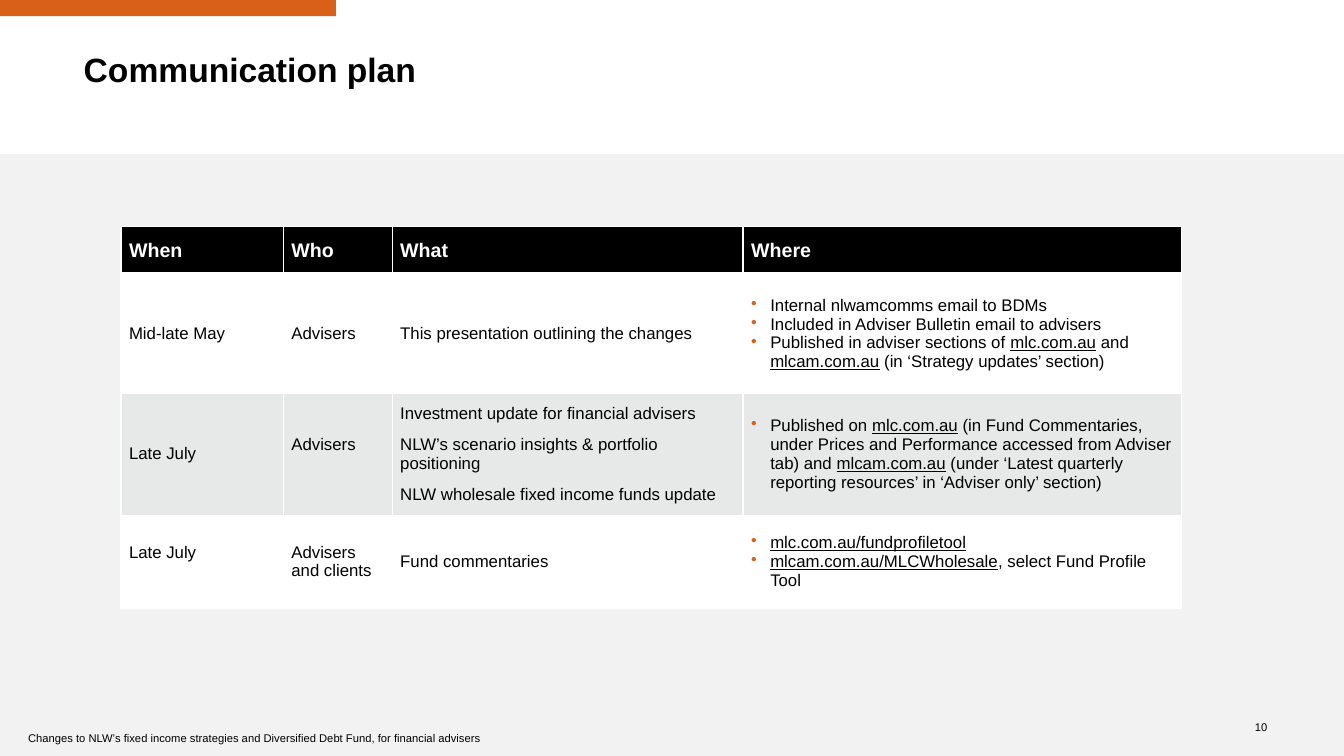
"""Build the communication plan slide."""
from dataclasses import dataclass

from lxml import etree
from pptx import Presentation, util as u
from pptx.dml.color import RGBColor
from pptx.enum import shapes, text
from pptx.oxml.ns import qn


@dataclass(frozen=True)
class Theme:
    """Colours, type sizes and spacing of the slide."""
    font: str = "Arial"
    black: str = "000000"
    white: str = "FFFFFF"
    orange: str = "D86018"
    backdrop: str = "F2F2F2"
    band: str = "E7E9E9"
    title_size: int = 24
    header_size: int = 14
    body_size: int = 12
    small_size: int = 8
    cell_inset: float = 0.08
    raised_inset: float = 0.27
    bullet_indent: float = 0.19


THEME = Theme()
WIDTH, HEIGHT = u.Inches(13.33), u.Inches(7.5)
COLUMN_SHARES = (12.08, 8.1, 26.11, 32.63)
ROW_SHARES = (6.27, 15.73, 15.33, 12.33)
HEADERS = ("When", "Who", "What", "Where")
PLAN = (
    (("Mid-late May",), ("Advisers",), ("This presentation outlining the changes",),
     ("Internal nlwamcomms email to BDMs",
      "Included in Adviser Bulletin email to advisers",
      "Published in adviser sections of _mlc.com.au_ and _mlcam.com.au_ "
      "(in ‘Strategy updates’ section)")),
    (("Late July",), ("Advisers",),
     ("Investment update for financial advisers",
      "NLW’s scenario insights & portfolio positioning",
      "NLW wholesale fixed income funds update"),
     ("Published on _mlc.com.au_ (in Fund Commentaries, under Prices and Performance "
      "accessed from Adviser tab) and _mlcam.com.au_ (under ‘Latest quarterly "
      "reporting resources’ in ‘Adviser only’ section)",)),
    (("Late July",), ("Advisers and clients",), ("Fund commentaries",),
     ("_mlc.com.au/fundprofiletool_",
      "_mlcam.com.au/MLCWholesale_, select Fund Profile Tool")),
)
RAISED_CELLS = {(2, 1), (3, 0)}


def apply(target, values):
    """Set every attribute named in values on target."""
    for name, value in values.items():
        setattr(target, name, value)


def across(share):
    """Turn a percentage of the slide width into a length."""
    return round(WIDTH * share / 100)


def down(share):
    """Turn a percentage of the slide height into a length."""
    return round(HEIGHT * share / 100)


def place(left, top, width, height):
    """Turn four percentages into a position and size."""
    return across(left), down(top), across(width), down(height)


def paint(fill, color):
    """Give a fill one solid colour."""
    fill.solid()
    fill.fore_color.rgb = RGBColor.from_string(color)


def write(paragraph, content, size, color=THEME.black, bold=False):
    """Write content as runs, underlining the parts between underscores."""
    for index, part in enumerate(content.split("_")):
        if part:
            run = paragraph.add_run()
            run.text = part
            apply(run.font, {"name": THEME.font, "size": u.Pt(size), "bold": bold,
                             "underline": index % 2 == 1})
            run.font.color.rgb = RGBColor.from_string(color)


def add_block(slide, box, color):
    """Add a plain filled rectangle."""
    shape = slide.shapes.add_shape(shapes.MSO_SHAPE.RECTANGLE, *place(*box))
    shape.shadow.inherit = False
    paint(shape.fill, color)
    shape.line.fill.background()


def add_label(slide, box, content, size, bold=False, frame=None, layout=None):
    """Add a one-paragraph text box."""
    text_frame = slide.shapes.add_textbox(*place(*box)).text_frame
    apply(text_frame, {"word_wrap": True, **(frame or {})})
    paragraph = text_frame.paragraphs[0]
    apply(paragraph, layout or {})
    write(paragraph, content, size, bold=bold)


def add_bullet(paragraph):
    """Give a paragraph a coloured bullet and a hanging indent."""
    properties = paragraph._p.get_or_add_pPr()
    indent = u.Inches(THEME.bullet_indent)
    properties.set("marL", str(indent))
    properties.set("indent", str(-indent))
    color = etree.SubElement(properties, qn("a:buClr"))
    etree.SubElement(color, qn("a:srgbClr"), val=THEME.orange)
    etree.SubElement(properties, qn("a:buChar"), char="•")


def add_borders(cell, top, bottom):
    """Draw white cell borders with the given top and bottom points."""
    properties = cell._tc.get_or_add_tcPr()
    for side, points in {"L": 1, "R": 1, "T": top, "B": bottom}.items():
        line = etree.SubElement(properties, qn(f"a:ln{side}"), w=str(u.Pt(points)))
        fill = etree.SubElement(line, qn("a:solidFill"))
        etree.SubElement(fill, qn("a:srgbClr"), val=THEME.white)


def style_cell(cell, color, top=1, bottom=1, raised=False):
    """Set the borders, fill, anchor and insets of a cell."""
    add_borders(cell, top, bottom)
    paint(cell.fill, color)
    inset = u.Inches(THEME.cell_inset)
    apply(cell, {"vertical_anchor": text.MSO_ANCHOR.MIDDLE,
                 "margin_left": inset, "margin_right": inset, "margin_top": inset,
                 "margin_bottom": u.Inches(THEME.raised_inset) if raised else inset})


def fill_cell(cell, lines, heading):
    """Write the paragraphs of a body cell in the manner of its column."""
    frame = cell.text_frame
    for index, line in enumerate(lines):
        paragraph = frame.add_paragraph() if index else frame.paragraphs[0]
        if heading == "What":
            apply(paragraph, {"space_before": u.Pt(3 if index else 0),
                              "space_after": u.Pt(6)})
        if heading == "Where":
            add_bullet(paragraph)
        write(paragraph, line, THEME.body_size)


def add_plan_table(slide, left, top):
    """Add the communication plan table."""
    box = place(left, top, sum(COLUMN_SHARES), sum(ROW_SHARES))
    table = slide.shapes.add_table(len(ROW_SHARES), len(COLUMN_SHARES), *box).table
    apply(table, {"first_row": True, "horz_banding": False})
    for column, share in zip(table.columns, COLUMN_SHARES):
        column.width = across(share)
    for row, share in zip(table.rows, ROW_SHARES):
        row.height = down(share)
    for column, heading in enumerate(HEADERS):
        cell = table.cell(0, column)
        style_cell(cell, THEME.black, bottom=3)
        write(cell.text_frame.paragraphs[0], heading, THEME.header_size, THEME.white, True)
        for row, entries in enumerate(PLAN, 1):
            cell = table.cell(row, column)
            style_cell(cell, THEME.white if row % 2 else THEME.band,
                       top=3 if row == 1 else 1, raised=(row, column) in RAISED_CELLS)
            fill_cell(cell, entries[column], heading)


def main():
    """Build and save the presentation."""
    presentation = Presentation()
    apply(presentation, {"slide_width": WIDTH, "slide_height": HEIGHT})
    slide = presentation.slides.add_slide(presentation.slide_layouts[6])
    flush = {f"margin_{side}": 0 for side in ("left", "top", "right", "bottom")}
    add_block(slide, (0, 0, 25, 2.13), THEME.orange)
    add_block(slide, (0, 20.4, 100, 79.6), THEME.backdrop)
    add_label(slide, (92.2, 94.8, 2.1, 2.8), "10", THEME.small_size,
              frame={**flush, "vertical_anchor": text.MSO_ANCHOR.MIDDLE},
              layout={"alignment": text.PP_ALIGN.RIGHT})
    add_label(slide, (6.23, 7.07, 79.74, 7.6), "Communication plan", THEME.title_size,
              bold=True, frame=flush, layout={"line_spacing": 0.9})
    add_plan_table(slide, 9, 30)
    add_label(slide, (1.35, 96.13, 37.5, 2.8),
              "Changes to NLW’s fixed income strategies and Diversified Debt Fund, "
              "for financial advisers", THEME.small_size)
    presentation.save("out.pptx")


if __name__ == "__main__":
    main()
